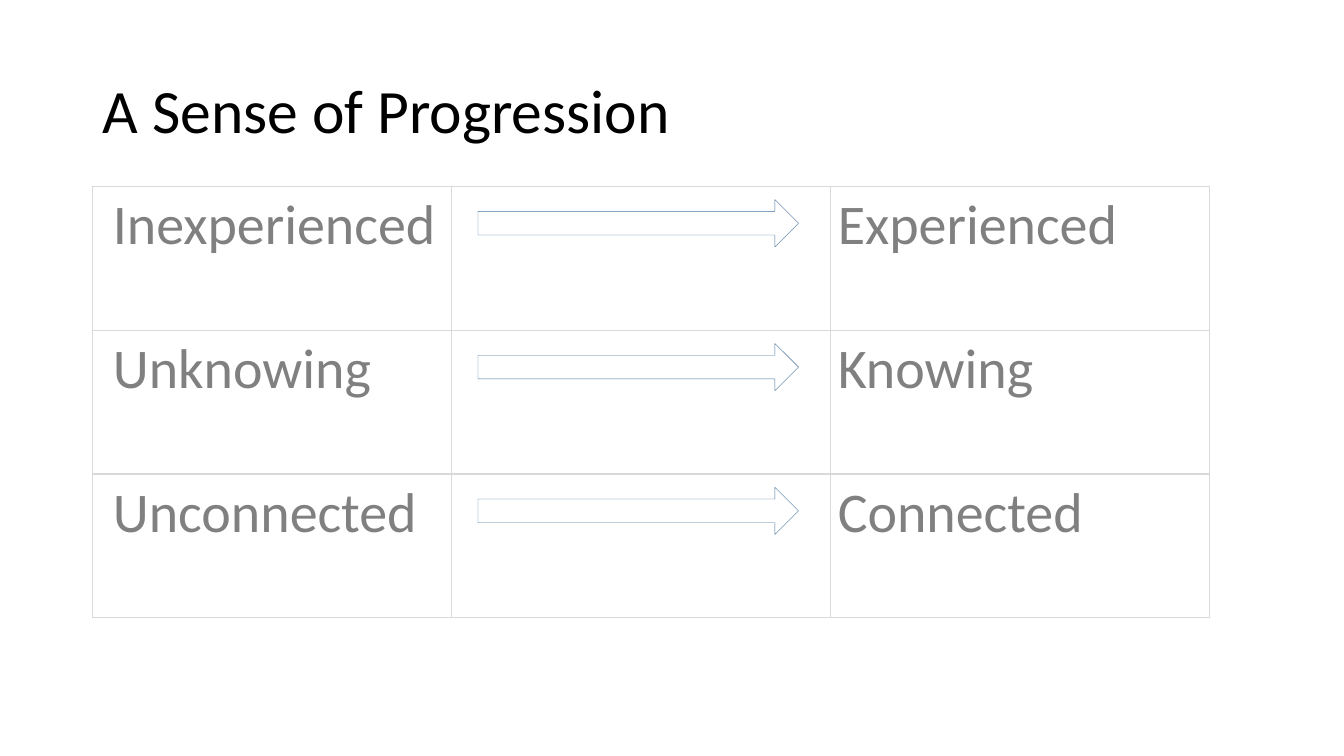
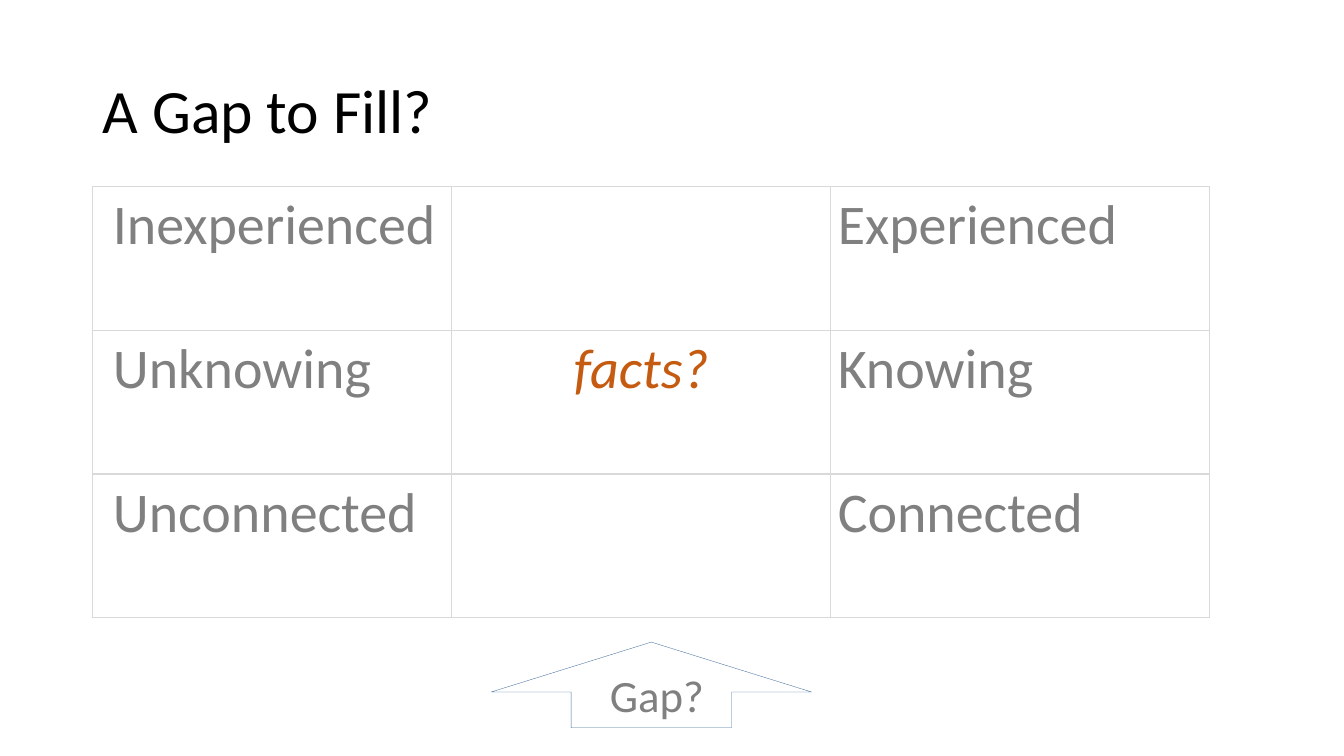
from pptx import Presentation
from pptx.dml.color import RGBColor
from pptx.enum import shapes, text
from pptx.oxml import parse_xml
from pptx.oxml.ns import nsdecls
from pptx.util import Inches, Pt

FONT = "Calibri"
COLORS = {"title": "000000", "body": "808080", "accent": "C55A11",
          "grid": "D9D9D9", "arrow": "43739E"}
TITLE = (0.92, 0.4, 11.5, 1.45)
GRID = (0.92, 1.85, 11.08, 4.28)
COLS = (3.56, 3.76, 3.76)
STAGES = [("Inexperienced", "Experienced"),
          ("Unknowing", "Knowing"),
          ("Unconnected", "Connected")]


def color(name):
    return RGBColor.from_string(COLORS[name])


def add_run(para, words, size, tone, italic=False):
    run = para.add_run()
    run.text = words
    font = run.font
    font.name, font.size, font.italic = FONT, Pt(size), italic
    font.color.rgb = color(tone)


def add_slide(deck, words):
    slide = deck.slides.add_slide(deck.slide_layouts[5])
    title = slide.shapes.title
    title.left, title.top, title.width, title.height = map(Inches, TITLE)
    frame = title.text_frame
    frame.vertical_anchor = text.MSO_ANCHOR.MIDDLE
    para = frame.paragraphs[0]
    para.alignment, para.line_spacing = text.PP_ALIGN.LEFT, 0.9
    add_run(para, words, 44, "title")
    return slide


def style_cell(cell, indent):
    """Clear the fill, set the margins and draw the four borders."""
    cell.margin_left, cell.margin_right = Inches(indent), Inches(0.07)
    cell.margin_top = cell.margin_bottom = 0
    cell.fill.background()
    props = cell._tc.get_or_add_tcPr()
    for pos, side in enumerate(("lnL", "lnR", "lnT", "lnB")):
        props.insert(pos, parse_xml(
            f'<a:{side} {nsdecls("a")} w="{Pt(1)}"><a:solidFill>'
            f'<a:srgbClr val="{COLORS["grid"]}"/></a:solidFill></a:{side}>'))


def add_grid(slide, box, middle=("", "", "")):
    table = slide.shapes.add_table(
        len(STAGES), len(COLS), *map(Inches, box)).table
    table.first_row = table.horz_banding = False
    for col, width in zip(table.columns, COLS):
        col.width = Inches(width)
    for r, (start, end) in enumerate(STAGES):
        for c, words in enumerate((start, middle[r], end)):
            cell = table.cell(r, c)
            style_cell(cell, 0.2 if c == 0 else 0.07)
            if not words:
                continue
            para = cell.text_frame.paragraphs[0]
            para.line_spacing = 1.07
            if c == 1:
                para.alignment = text.PP_ALIGN.CENTER
                add_run(para, words, 40, "accent", italic=True)
            else:
                add_run(para, words, 40, "body")


def add_arrow(slide, kind, box):
    arrow = slide.shapes.add_shape(kind, *map(Inches, box))
    arrow.shadow.inherit = False
    arrow.fill.background()
    arrow.line.color.rgb = color("arrow")
    arrow.line.width = Pt(0.25)
    return arrow


def add_steps(slide, box):
    """Place one right arrow in the middle column of each row."""
    left, top, _, height = box
    step = height / len(STAGES)
    for row in range(len(STAGES)):
        add_arrow(slide, shapes.MSO_SHAPE.RIGHT_ARROW,
                  (left + COLS[0] + 0.26, top + 0.13 + row * step, 3.18, 0.47))


def add_gap(slide, box):
    left, top, _, height = box
    x, y = left + COLS[0] + 0.39, top + height + 0.24
    arrow = add_arrow(slide, shapes.MSO_SHAPE.UP_ARROW, (x, y, 3.18, 0.85))
    arrow.adjustments[1] = 0.583
    label = slide.shapes.add_textbox(
        *map(Inches, (x + 1.08, y + 0.21, 1.64, 0.64)))
    label.text_frame.word_wrap = True
    add_run(label.text_frame.paragraphs[0], "Gap?", 32, "body")


def main():
    deck = Presentation()
    deck.slide_width, deck.slide_height = Inches(13.33), Inches(7.5)

    slide = add_slide(deck, "A Sense of Progression")
    add_grid(slide, GRID)
    add_steps(slide, GRID)

    slide = add_slide(deck, "A Gap to Fill?")
    add_grid(slide, GRID, ("", "facts?", ""))
    add_gap(slide, GRID)

    deck.save("out.pptx")


if __name__ == "__main__":
    main()
